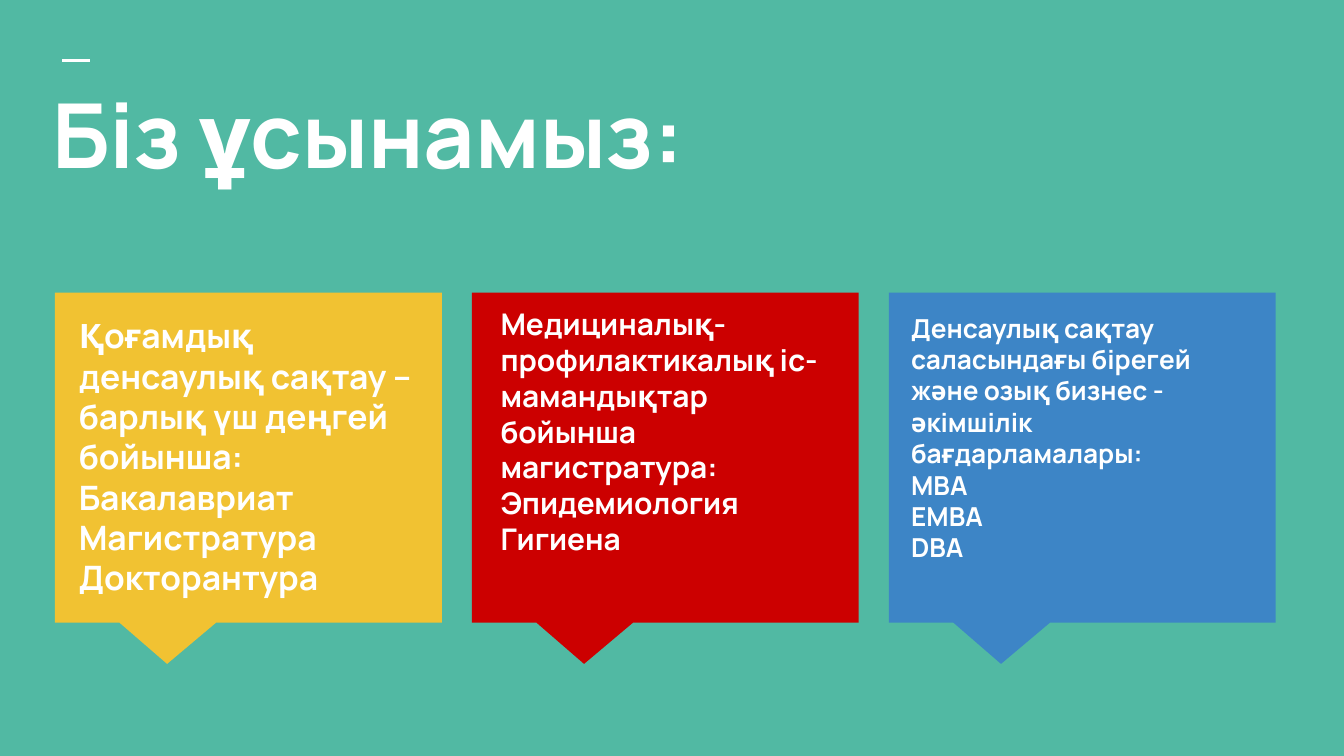
from dataclasses import dataclass

from lxml.etree import SubElement
from pptx import Presentation
from pptx.dml.color import RGBColor
from pptx.enum.shapes import MSO_CONNECTOR, MSO_SHAPE
from pptx.enum.text import MSO_ANCHOR, MSO_AUTO_SIZE, PP_ALIGN
from pptx.oxml.ns import qn
from pptx.util import Cm, Pt


@dataclass(frozen=True)
class Theme:
    font: str = "Manrope"
    background: RGBColor = RGBColor.from_string("51B9A3")
    text: RGBColor = RGBColor.from_string("FFFFFF")
    yellow: RGBColor = RGBColor.from_string("F1C232")
    red: RGBColor = RGBColor.from_string("CC0000")
    blue: RGBColor = RGBColor.from_string("3D85C6")
    heading_size: Pt = Pt(48)
    large: Pt = Pt(18)
    medium: Pt = Pt(16)
    small: Pt = Pt(14)


theme = Theme()


def write_lines(frame, lines, size):
    """Fill a frame with one left-aligned paragraph, broken between lines."""
    frame.word_wrap = True
    frame.auto_size = MSO_AUTO_SIZE.NONE
    frame.vertical_anchor = MSO_ANCHOR.TOP
    frame.margin_left = frame.margin_right = Cm(0.25)
    frame.margin_top = frame.margin_bottom = Cm(0.25)
    paragraph = frame.paragraphs[0]
    paragraph.alignment = PP_ALIGN.LEFT
    for index, line in enumerate(lines):
        if index:
            paragraph.add_line_break()
        run = paragraph.add_run()
        run.text = line
        run.font.name = theme.font
        run.font.size = size
        run.font.bold = True
        run.font.color.rgb = theme.text


prs = Presentation()
prs.slide_width, prs.slide_height = Cm(25.4), Cm(14.29)
slide = prs.slides.add_slide(prs.slide_layouts[5])
slide.background.fill.solid()
slide.background.fill.fore_color.rgb = theme.background

# Heading with a short dash above it
dash = slide.shapes.add_connector(
    MSO_CONNECTOR.STRAIGHT, Cm(1.18), Cm(1.15), Cm(1.7), Cm(1.15))
dash.line.color.rgb = theme.text
dash.line.width = Pt(1.5)
SubElement(dash._element.spPr, qn("a:effectLst"))

heading = slide.shapes.title
heading.left, heading.top = Cm(0.74), Cm(1.24)
heading.width, heading.height = Cm(23.95), Cm(3.3)
write_lines(heading.text_frame, ["Біз ұсынамыз:"], theme.heading_size)

# Programme callouts: colour, type size, text offset (x, y), lines
programmes = [
    (theme.yellow, theme.large, 0.2, 0.18, [
        "Қоғамдық денсаулық сақтау – барлық үш деңгей бойынша: "
        "Бакалавриат Магистратура Докторантура"]),
    (theme.red, theme.medium, 0.29, 0, [
        "Медициналық-профилактикалық іс-мамандықтар бойынша магистратура:",
        "Эпидемиология",
        "Гигиена"]),
    (theme.blue, theme.small, 0.17, 0.12, [
        "Денсаулық сақтау саласындағы бірегей және озық бизнес - "
        "әкімшілік бағдарламалары:",
        "МВА",
        "ЕМВА",
        "DBA"]),
]
first_left, top, step = 1.04, 5.53, 7.88
for index, (color, size, dx, dy, lines) in enumerate(programmes):
    left = first_left + index * step
    callout = slide.shapes.add_shape(
        MSO_SHAPE.RECTANGULAR_CALLOUT, Cm(left), Cm(top), Cm(7.31), Cm(6.24))
    callout.adjustments[0] = -0.21
    callout.adjustments[1] = 0.625
    callout.fill.solid()
    callout.fill.fore_color.rgb = color
    callout.line.fill.background()
    callout.shadow.inherit = False

    programme = slide.shapes.add_textbox(
        Cm(left + dx), Cm(top + dy), Cm(6.88), Cm(5.6))
    write_lines(programme.text_frame, lines, size)

prs.save("out.pptx")
